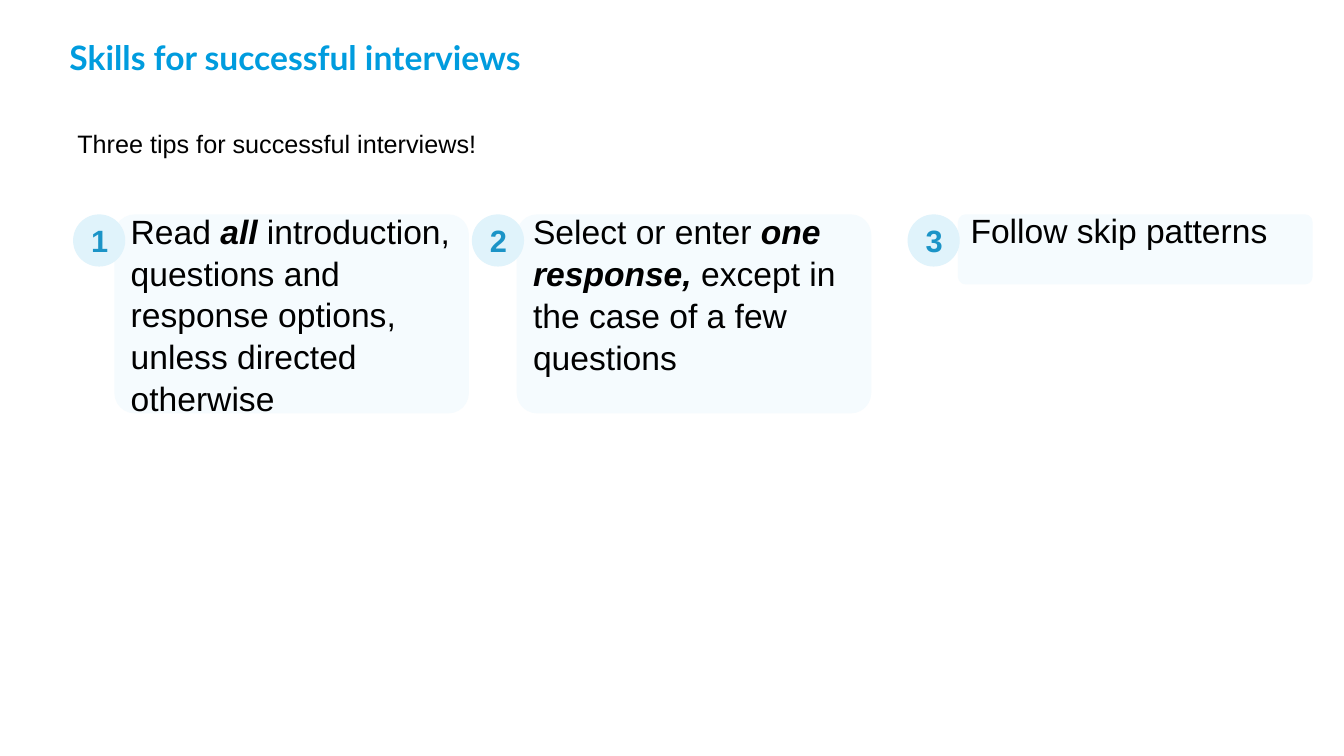
from pptx import Presentation
from pptx.dml.color import RGBColor
from pptx.enum.shapes import MSO_SHAPE as Shape
from pptx.enum.text import MSO_ANCHOR as Anchor, PP_ALIGN as Align
from pptx.util import Cm, Pt

BLACK = "000000"
STRONG = {"bold": True, "italic": True}


def tint(code):
    return RGBColor.from_string(code)


def write(para, text, size=24, font="Arial", color=BLACK, bold=False, italic=False):
    run = para.add_run()
    run.text = text
    run.font.size, run.font.name = Pt(size), font
    run.font.bold, run.font.italic = bold, italic
    run.font.color.rgb = tint(color)


class Deck:
    """Holds the palette and the slide being built."""
    blue, digit = "009CDE", "1B94C7"
    panel, badge = "F5FBFE", "E0F3FB"

    def __init__(self):
        self.prs = Presentation()
        self.prs.slide_width, self.prs.slide_height = Cm(33.87), Cm(19.05)
        self.slide = self.prs.slides.add_slide(self.prs.slide_layouts[5])

    def title(self, text):
        box = self.slide.shapes.title
        box.left, box.top, box.width, box.height = Cm(1.7), Cm(0.97), Cm(22.63), Cm(0.99)
        frame = box.text_frame
        frame.word_wrap = True
        frame.vertical_anchor = Anchor.BOTTOM
        frame.margin_left, frame.margin_right = Cm(0.05), Cm(1)
        frame.margin_top = frame.margin_bottom = 0
        para = frame.paragraphs[0]
        para.alignment, para.line_spacing = Align.LEFT, 0.9
        write(para, text, font="Lato", color=self.blue, bold=True)

    def note(self, text, left, top, width, height):
        box = self.slide.shapes.add_textbox(Cm(left), Cm(top), Cm(width), Cm(height))
        box.text_frame.word_wrap = True
        write(box.text_frame.paragraphs[0], text, size=18)

    def block(self, group, kind, fill, left, top, width, height):
        """Add a flat shape and return it with its first paragraph."""
        shape = group.shapes.add_shape(kind, Cm(left), Cm(top), Cm(width), Cm(height))
        shape.shadow.inherit = False
        shape.fill.solid()
        shape.fill.fore_color.rgb = shape.line.color.rgb = tint(fill)
        shape.line.width = Pt(1)
        shape.text_frame.word_wrap = True
        shape.text_frame.vertical_anchor = Anchor.MIDDLE
        return shape, shape.text_frame.paragraphs[0]

    def tip(self, num, parts, disc, left, height, foot, lead):
        """Add a numbered panel; foot is its bottom margin, lead its line spacing."""
        group = self.slide.shapes.add_group_shape()
        card, para = self.block(group, Shape.ROUNDED_RECTANGLE, self.panel,
                                left, 5.42, 8.9, height)
        card.adjustments[0] = 0.1
        card.text_frame.margin_bottom = Cm(foot)
        para.alignment, para.line_spacing = Align.LEFT, lead
        for text, style in parts:
            write(para, text, **style)
        _, para = self.block(group, Shape.OVAL, self.badge, disc, 5.42, 1.28, 1.28)
        para.alignment = Align.CENTER
        write(para, str(num), size=22, color=self.digit, bold=True)


TIPS = [
    ([("Read ", {}), ("all", STRONG),
      (" introduction, questions and response options, unless directed otherwise", {})],
     1.86, 2.9, 4.98, 0.13, 1.04),
    ([("Select or enter ", {}), ("one response, ", STRONG),
      ("except in the case of a few questions", {})],
     11.91, 13.04, 4.98, 1.15, 1.04),
    ([("Follow skip patterns", {})], 22.89, 24.16, 1.73, 1.1, 1.0),
]


def main():
    deck = Deck()
    deck.title("Skills for successful interviews")
    for num, tip in enumerate(TIPS, 1):
        deck.tip(num, *tip)
    deck.note("Three tips for successful interviews!", 1.7, 3.1, 20.12, 1.02)
    deck.prs.save("out.pptx")


if __name__ == "__main__":
    main()
